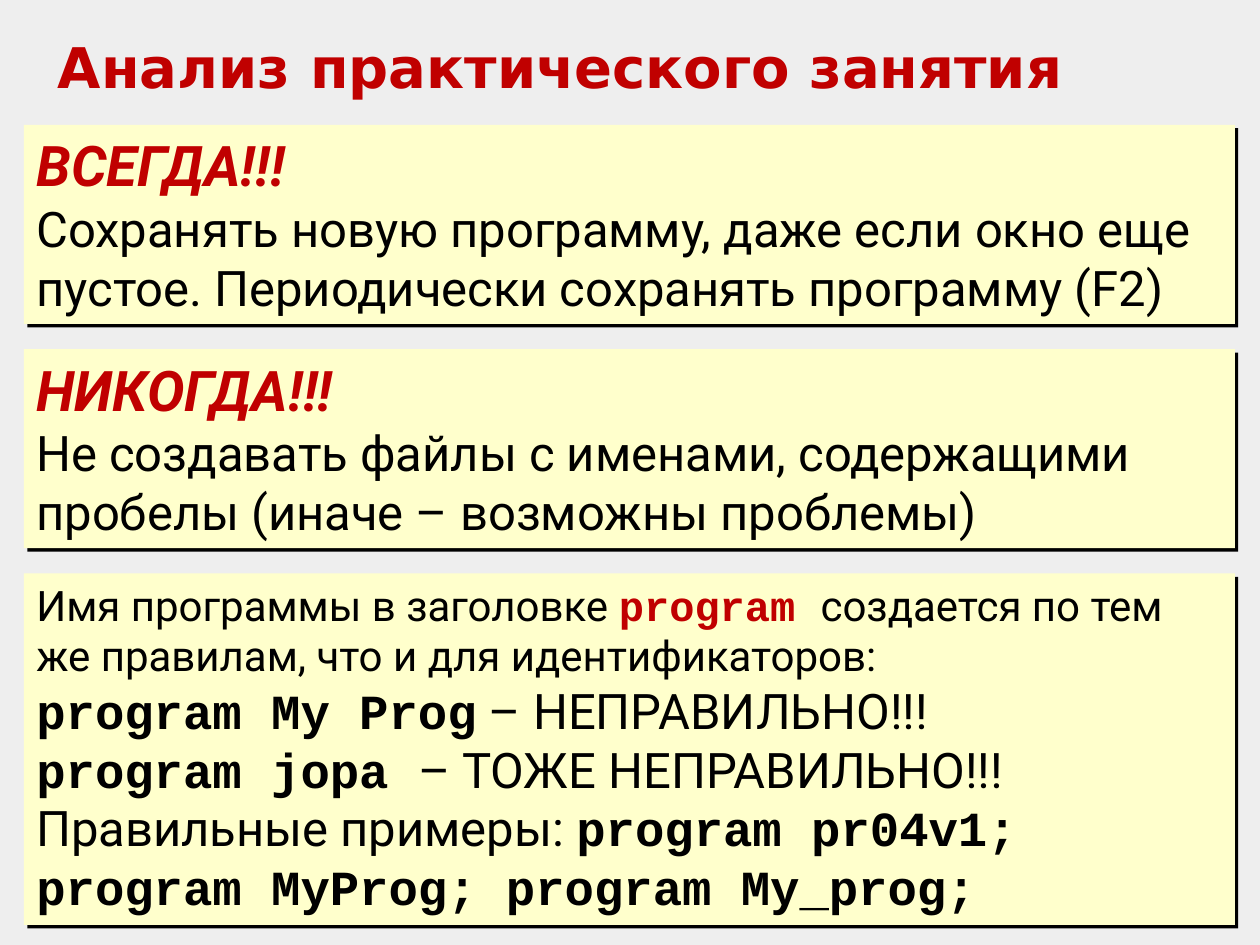
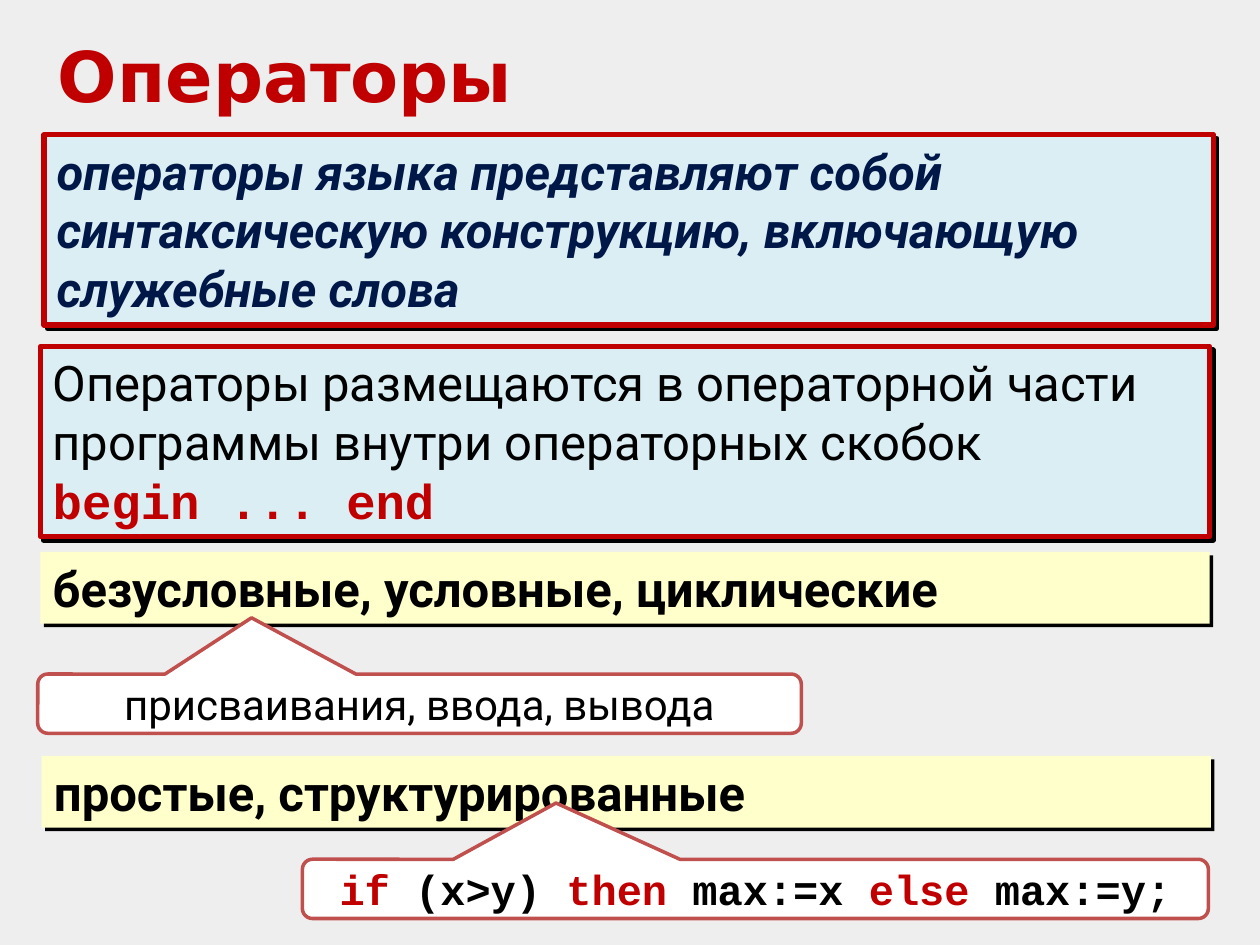
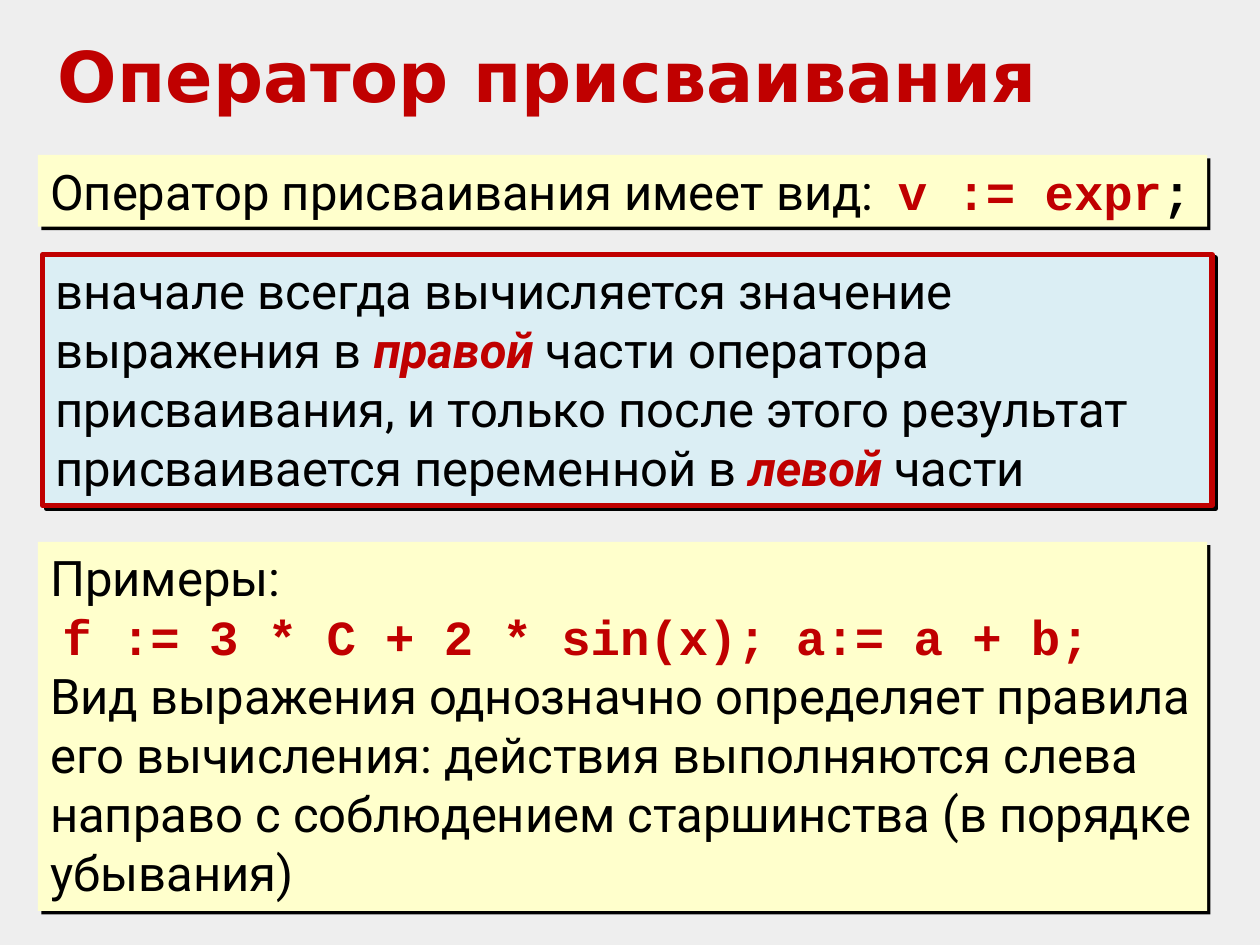
from dataclasses import dataclass, field

from lxml.etree import SubElement
from pptx import Presentation
from pptx.dml.color import RGBColor
from pptx.enum.shapes import MSO_SHAPE
from pptx.enum.text import MSO_ANCHOR, MSO_AUTO_SIZE, PP_ALIGN
from pptx.oxml.ns import qn
from pptx.util import Emu, Pt

PX = 9144
RED, BLACK, NAVY = "C00000", "000000", "001848"


@dataclass(frozen=True)
class Theme:
    """Colours, type sizes and text styles shared by the slides."""

    background: str = "EEEEEE"
    shadow: str = BLACK
    heading: int = 40
    long_heading: int = 32
    warning: int = 32
    body: int = 28
    small: int = 24
    panels: dict = field(default_factory=lambda: {
        "note": {"fill": "FFFFCC", "line": None, "width": 0},
        "definition": {"fill": "DBEEF4", "line": RED, "width": 3},
        "callout": {"fill": "FFFFFF", "line": "C0504D", "width": 2},
    })
    styles: dict = field(default_factory=lambda: {
        "heading": ("DejaVu Sans", RED, True, False),
        "plain": ("Roboto", BLACK, False, False),
        "strong": ("Roboto", BLACK, True, False),
        "accent": ("Roboto", RED, True, True),
        "term": ("Roboto", NAVY, True, True),
        "code": ("Courier New", BLACK, True, False),
        "keyword": ("Courier New", RED, True, False),
    })


@dataclass(frozen=True)
class Box:
    """A rectangle in px."""

    left: int
    top: int
    width: int
    height: int

    def inner(self, left, top, width, height):
        """Return a box placed relative to this one."""
        return Box(self.left + left, self.top + top, width, height)

    def emu(self):
        """Return the four lengths in EMU."""
        return [Emu(n * PX) for n in (self.left, self.top, self.width, self.height)]


THEME = Theme()
PAGE = Box(0, 0, 1000, 750)


def write(frame, paragraphs, align=PP_ALIGN.LEFT, anchor=MSO_ANCHOR.TOP):
    """Fill a frame with (size, (text, style), ...) paragraphs."""
    layout = {"word_wrap": True, "auto_size": MSO_AUTO_SIZE.NONE, "vertical_anchor": anchor}
    for key, value in layout.items():
        setattr(frame, key, value)
    for index, (size, *pieces) in enumerate(paragraphs):
        paragraph = frame.add_paragraph() if index else frame.paragraphs[0]
        paragraph.alignment = align
        for text, style in pieces:
            run = paragraph.add_run()
            run.text = text
            name, color, bold, italic = THEME.styles[style]
            formats = {"name": name, "size": Pt(size), "bold": bold, "italic": italic}
            for key, value in formats.items():
                setattr(run.font, key, value)
            run.font.color.rgb = RGBColor.from_string(color)


def paint(shape, kind):
    """Apply the fill and outline of a panel kind."""
    look = THEME.panels[kind]
    shape.shadow.inherit = False
    shape.fill.solid()
    shape.fill.fore_color.rgb = RGBColor.from_string(look["fill"])
    if look["line"]:
        shape.line.color.rgb = RGBColor.from_string(look["line"])
        shape.line.width = Pt(look["width"])
    else:
        shape.line.fill.background()


def add_panel(slide, box, kind, paragraphs):
    """Add a text panel with a hard shadow."""
    panel = slide.shapes.add_shape(MSO_SHAPE.RECTANGLE, *box.emu())
    paint(panel, kind)
    effects = panel._element.spPr.find(qn("a:effectLst"))
    shadow = SubElement(effects, qn("a:outerShdw"), dist=str(Pt(2.8)), dir="2700000",
                        algn="ctr", rotWithShape="0")
    SubElement(shadow, qn("a:srgbClr"), val=THEME.shadow)
    write(panel.text_frame, paragraphs)


def add_callout(slide, box, *pieces):
    """Add a rounded callout pointing up at the panel above."""
    callout = slide.shapes.add_shape(MSO_SHAPE.ROUNDED_RECTANGULAR_CALLOUT, *box.emu())
    for index, value in enumerate((-0.22, -1.45, 0.17)):
        callout.adjustments[index] = value
    paint(callout, "callout")
    write(callout.text_frame, [(THEME.small, *pieces)], PP_ALIGN.CENTER, MSO_ANCHOR.MIDDLE)


def add_titled_slide(deck, heading, size=THEME.heading, height=87):
    """Add a slide with its heading in the title placeholder."""
    slide = deck.slides.add_slide(deck.slide_layouts.get_by_name("Title Only"))
    title = slide.shapes.title
    title.left, title.top, title.width, title.height = PAGE.inner(36, 21, 928, height).emu()
    write(title.text_frame, [(size, (heading, "heading"))])
    return slide


def build_practice(deck, box):
    """Build the review of the practical lesson as an evenly spaced stack."""
    slide = add_titled_slide(deck, "Анализ практического занятия", THEME.long_heading, 64)
    body, gap, top = THEME.body, 20, 0
    advice = [
        ("ВСЕГДА!!!", "Сохранять новую программу, даже если окно еще пустое. "
                      "Периодически сохранять программу (F2)"),
        ("НИКОГДА!!!", "Не создавать файлы с именами, содержащими пробелы "
                       "(иначе – возможны проблемы)"),
    ]
    naming = [
        (THEME.small, ("Имя программы в заголовке ", "plain"), ("program ", "keyword"),
         ("создается по тем же правилам, что и для идентификаторов:", "plain")),
        (body, ("program My Prog", "code"), (" – НЕПРАВИЛЬНО!!!", "plain")),
        (body, ("program jopa ", "code"), ("– ТОЖЕ НЕПРАВИЛЬНО!!!", "plain")),
        (body, ("Правильные примеры: ", "plain"),
         ("program pr04v1; program MyProg; program My_prog;", "code")),
    ]
    stack = [(158, [(THEME.warning, (word, "accent")), (body, (rule, "plain"))])
             for word, rule in advice]
    for height, paragraphs in [*stack, (279, naming)]:
        add_panel(slide, box.inner(0, top, box.width, height), "note", paragraphs)
        top += height + gap


def add_panels(slide, box, panels):
    """Add full-width panels at their offsets in the box."""
    for left, top, height, kind, paragraphs in panels:
        add_panel(slide, box.inner(left, top, box.width, height), kind, paragraphs)


def build_operators(deck, box):
    """Build the overview of operators with two callouts."""
    slide = add_titled_slide(deck, "Операторы")
    body = THEME.body
    add_panels(slide, box, [
        (3, 0, 151, "definition", [
            (body, ("операторы языка представляют собой синтаксическую конструкцию, "
                    "включающую служебные слова", "term"))]),
        (0, 168, 151, "definition", [
            (body, ("Операторы размещаются в операторной части программы "
                    "внутри операторных скобок", "plain")),
            (body, ("begin ... end", "keyword"))]),
        (0, 331, 57, "note", [(body, ("безусловные, условные, циклические", "strong"))]),
        (1, 493, 57, "note", [(body, ("простые, структурированные", "strong"))]),
    ])
    add_callout(slide, box.inner(-2, 428, 606, 47), ("присваивания, ввода, вывода", "plain"))
    add_callout(slide, box.inner(208, 575, 719, 47),
                ("if", "keyword"), (" (x>y) ", "code"), ("then", "keyword"),
                (" max:=x ", "code"), ("else", "keyword"), (" max:=y;", "code"))


def build_assignment(deck, box):
    """Build the explanation of the assignment operator."""
    slide = add_titled_slide(deck, "Оператор присваивания")
    body = THEME.body
    add_panels(slide, box, [
        (0, 0, 57, "note", [
            (body, ("Оператор присваивания имеет вид:  ", "plain"),
             ("v := expr", "keyword"), (";", "code"))]),
        (4, 79, 199, "definition", [
            (body, ("вначале всегда вычисляется значение выражения в ", "plain"),
             ("правой ", "accent"),
             ("части оператора присваивания, и только после этого результат "
              "присваивается переменной в ", "plain"),
             ("левой ", "accent"), ("части", "plain"))]),
        (0, 307, 293, "note", [
            (body, ("Примеры:", "plain")),
            (body, (" ", "plain"), ("f := 3 * C + 2 * sin(x); a:= a + b;", "keyword")),
            (body, ("Вид выражения однозначно определяет правила его вычисления: "
                    "действия выполняются слева направо с соблюдением старшинства "
                    "(в порядке убывания)", "plain"))]),
    ])


def main():
    """Build and save the deck."""
    deck = Presentation()
    _, _, deck.slide_width, deck.slide_height = PAGE.emu()
    backdrop = deck.slide_master.background.fill
    backdrop.solid()
    backdrop.fore_color.rgb = RGBColor.from_string(THEME.background)
    build_practice(deck, PAGE.inner(19, 99, 961, 635))
    build_operators(deck, PAGE.inner(32, 107, 928, 622))
    build_assignment(deck, PAGE.inner(30, 123, 928, 600))
    deck.save("out.pptx")


if __name__ == "__main__":
    main()
